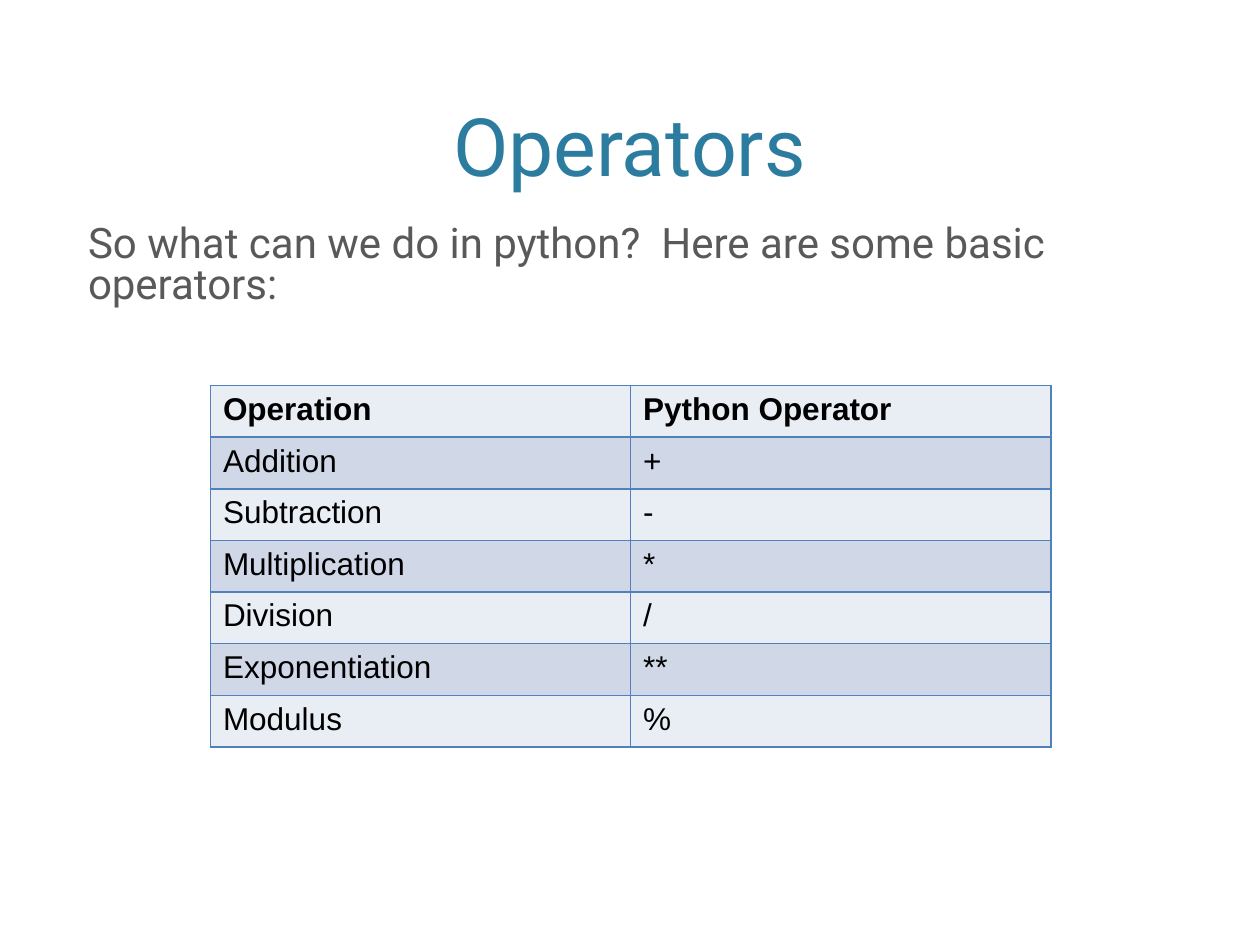
from lxml.etree import SubElement
from pptx import Presentation
from pptx.dml.color import RGBColor
from pptx.enum.text import MSO_ANCHOR as Anchor, PP_ALIGN as Align
from pptx.oxml.ns import qn
from pptx.util import Inches, Pt

COLORS = {
    "title": "2C7C9F",
    "body": "595959",
    "cell": "000000",
    "light_row": "E9EDF4",
    "dark_row": "D0D8E8",
    "border": "4F81BD",
}

OPERATORS = [
    ("Operation", "Python Operator"),
    ("Addition", "+"),
    ("Subtraction", "-"),
    ("Multiplication", "*"),
    ("Division", "/"),
    ("Exponentiation", "**"),
    ("Modulus", "%"),
]


class SlideBuilder:
    heading_font = "Roboto"
    table_font = "Arial"

    def __init__(self, slide):
        self.slide = slide

    def add_run(self, paragraph, text, font, size, color, bold=False):
        run = paragraph.add_run()
        run.text = text
        run.font.name = font
        run.font.size = Pt(size)
        run.font.bold = bold
        run.font.color.rgb = RGBColor.from_string(COLORS[color])

    def add_text(self, text, left, top, width, height, size, color,
                 align=Align.LEFT, anchor=Anchor.TOP, line_spacing=1.0):
        box = self.slide.shapes.add_textbox(
            Inches(left), Inches(top), Inches(width), Inches(height))
        frame = box.text_frame
        frame.word_wrap = True
        frame.vertical_anchor = anchor
        paragraph = frame.paragraphs[0]
        paragraph.alignment = align
        paragraph.line_spacing = line_spacing
        self.add_run(paragraph, text, self.heading_font, size, color)

    def add_borders(self, cell):
        properties = cell._tc.get_or_add_tcPr()
        for side in ("a:lnL", "a:lnR", "a:lnT", "a:lnB"):
            line = SubElement(properties, qn(side), w=str(Pt(1)))
            fill = SubElement(line, qn("a:solidFill"))
            SubElement(fill, qn("a:srgbClr"), val=COLORS["border"])

    def add_table(self, rows, left, top, width, row_height):
        table = self.slide.shapes.add_table(
            len(rows), len(rows[0]), Inches(left), Inches(top),
            Inches(width), Inches(row_height * len(rows))).table
        for row_index, values in enumerate(rows):
            row_color = "dark_row" if row_index % 2 else "light_row"
            for column_index, text in enumerate(values):
                cell = table.cell(row_index, column_index)
                self.add_borders(cell)
                cell.fill.solid()
                cell.fill.fore_color.rgb = RGBColor.from_string(COLORS[row_color])
                self.add_run(cell.text_frame.paragraphs[0], text,
                             self.table_font, 18, "cell", bold=row_index == 0)


def main():
    presentation = Presentation()
    presentation.slide_width = Inches(10)
    presentation.slide_height = Inches(7.5)
    slide = presentation.slides.add_slide(presentation.slide_layouts[6])
    builder = SlideBuilder(slide)
    builder.add_text("Operators", 0.6, 0.12, 8.79, 1.46, 46, "title",
                     align=Align.CENTER, anchor=Anchor.BOTTOM)
    builder.add_text("So what can we do in python?  Here are some basic operators:",
                     0.6, 1.75, 8.79, 4.75, 24, "body", line_spacing=0.8)
    builder.add_table(OPERATORS, 1.67, 3.06, 6.67, 0.41)
    presentation.save("out.pptx")


if __name__ == "__main__":
    main()
